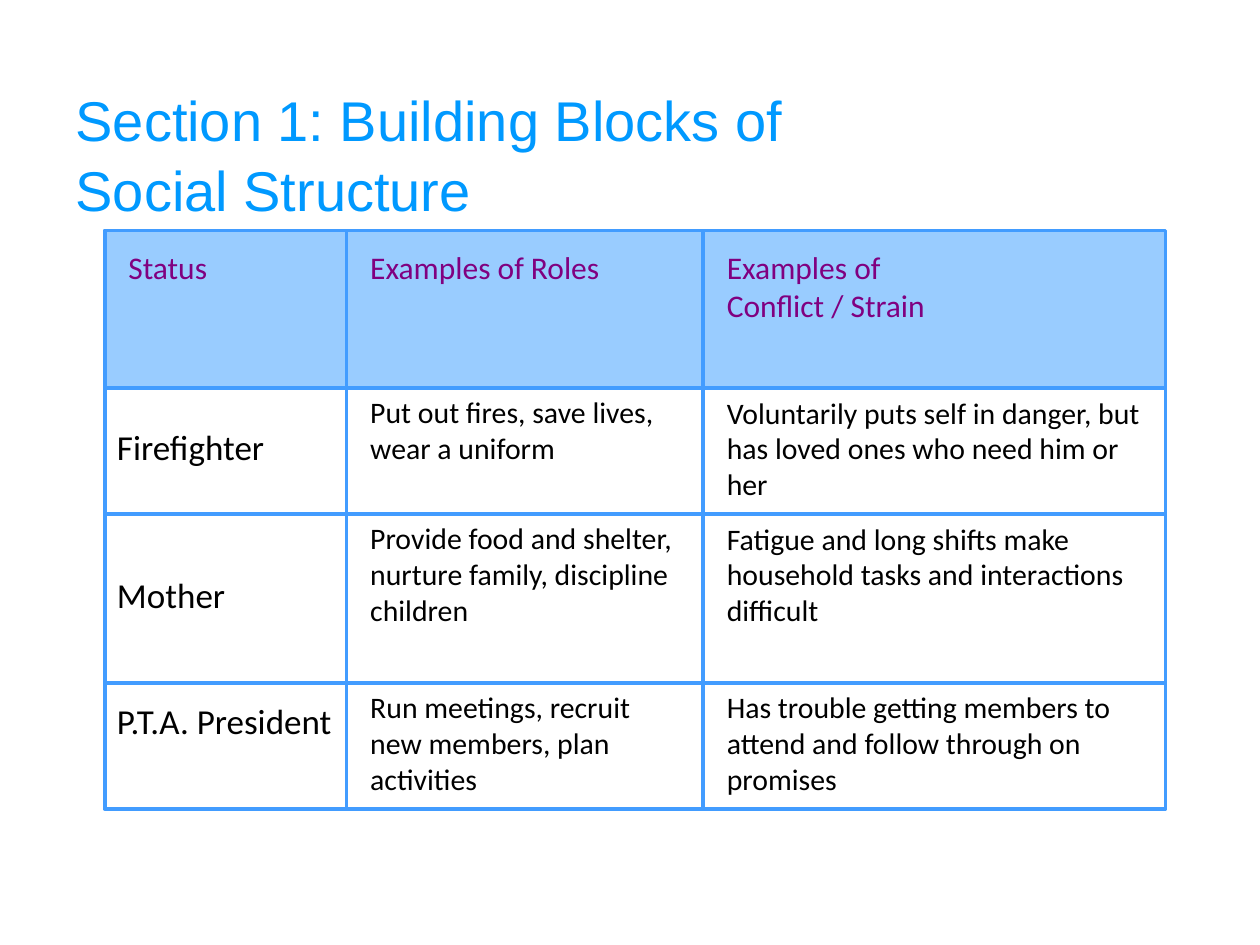
from copy import deepcopy

from lxml.etree import SubElement
from pptx import Presentation
from pptx.dml.color import RGBColor
from pptx.enum.shapes import MSO_CONNECTOR, MSO_SHAPE
from pptx.enum.text import MSO_ANCHOR, MSO_AUTO_SIZE, PP_ALIGN
from pptx.oxml.ns import qn
from pptx.util import Inches, Pt

LEFT, TOP, RIGHT, BOTTOM = 0.83, 1.83, 9.25, 6.42
COLS = [2.75, 5.58]
ROWS = [3.08, 4.08, 5.42]
WIDTHS = [2.67, 3.5]
PAD = 0.09

HEADS = [
    (0.92, 1.75, 0.5, "Status"),
    (COLS[0] + PAD, WIDTHS[0], 0.9, "Examples of Roles"),
    (COLS[1] + PAD, WIDTHS[1], 0.9, "Examples of \vConflict / Strain"),
]
# Status, its top and height, then the role and strain cells with their heights
BODY = [
    ("Firefighter", 3.33, 0.43,
     [("Put out fires, save lives, wear a uniform", 0.67),
      ("Voluntarily puts self in danger, but has loved ones who need him or her", 0.95)]),
    ("Mother", 4.5, 0.43,
     [("Provide food and shelter, nurture family, discipline children", 1.23),
      ("Fatigue and long shifts make household tasks and interactions difficult", 0.95)]),
    ("P.T.A. President", 5.5, 0.77,
     [("Run meetings, recruit new members, plan activities", 0.95),
      ("Has trouble getting members to attend and follow through on promises", 0.95)]),
]


def color(code):
    return RGBColor.from_string(code)


class Page:
    font = "Calibri"
    rule = "429CFF"
    weight = 2.25

    def __init__(self, slide):
        self.slide = slide

    def fill_in(self, frame, text, size, ink, font):
        """Fill a frame; line breaks take the style of the runs."""
        frame.word_wrap = True
        frame.text = text
        para = frame.paragraphs[0]
        para.alignment = PP_ALIGN.LEFT
        for run in para.runs:
            run.font.size = Pt(size)
            run.font.name = font
            run.font.color.rgb = color(ink)
        for brk in para._p.findall(qn("a:br")):
            brk.append(deepcopy(para.runs[0]._r.rPr))

    def title(self, x, y, w, h, text):
        shape = self.slide.shapes.title
        shape.left, shape.top = Inches(x), Inches(y)
        shape.width, shape.height = Inches(w), Inches(h)
        frame = shape.text_frame
        self.fill_in(frame, text, 32, "0099FF", "Arial")
        frame.auto_size = MSO_AUTO_SIZE.NONE
        frame.vertical_anchor = MSO_ANCHOR.MIDDLE
        frame.paragraphs[0].line_spacing = 1.05

    def panel(self, x, y, w, h, fill):
        shape = self.slide.shapes.add_shape(
            MSO_SHAPE.ROUNDED_RECTANGLE, Inches(x), Inches(y), Inches(w), Inches(h))
        shape.adjustments[0] = 0
        shape.shadow.inherit = False
        shape.fill.solid()
        shape.fill.fore_color.rgb = color(fill)
        shape.line.color.rgb = color(self.rule)
        shape.line.width = Pt(self.weight)

    def line(self, x1, y1, x2, y2):
        link = self.slide.shapes.add_connector(
            MSO_CONNECTOR.STRAIGHT, Inches(x1), Inches(y1), Inches(x2), Inches(y2))
        link.line.color.rgb = color(self.rule)
        link.line.width = Pt(self.weight)
        SubElement(link._element.spPr, qn("a:effectLst"))

    def text(self, x, y, w, h, text, size, ink="000000"):
        box = self.slide.shapes.add_textbox(Inches(x), Inches(y), Inches(w), Inches(h))
        self.fill_in(box.text_frame, text, size, ink, self.font)
        box.text_frame.auto_size = MSO_AUTO_SIZE.SHAPE_TO_FIT_TEXT


def main():
    deck = Presentation()
    deck.slide_width, deck.slide_height = Inches(10), Inches(7.5)
    page = Page(deck.slides.add_slide(deck.slide_layouts[5]))

    page.title(0.5, 0.75, 9, 0.92, "Section 1: Building Blocks of \vSocial Structure")
    page.panel(LEFT, TOP, RIGHT - LEFT, 4.5, "99CCFF")
    page.panel(LEFT, ROWS[0], RIGHT - LEFT, BOTTOM - ROWS[0], "FFFFFF")
    for x in COLS:
        page.line(x, TOP, x, BOTTOM)
    for y in ROWS[1:]:
        page.line(LEFT, y, RIGHT, y)

    for x, w, h, head in HEADS:
        page.text(x, TOP + PAD, w, h, head, 18, "800080")
    for row, (status, top, high, cells) in zip(ROWS, BODY):
        page.text(LEFT, top, COLS[0] - LEFT, high, status, 20)
        for x, w, (words, h) in zip(COLS, WIDTHS, cells):
            page.text(x + PAD, row, w, h, words, 17)

    deck.save("out.pptx")


if __name__ == "__main__":
    main()
